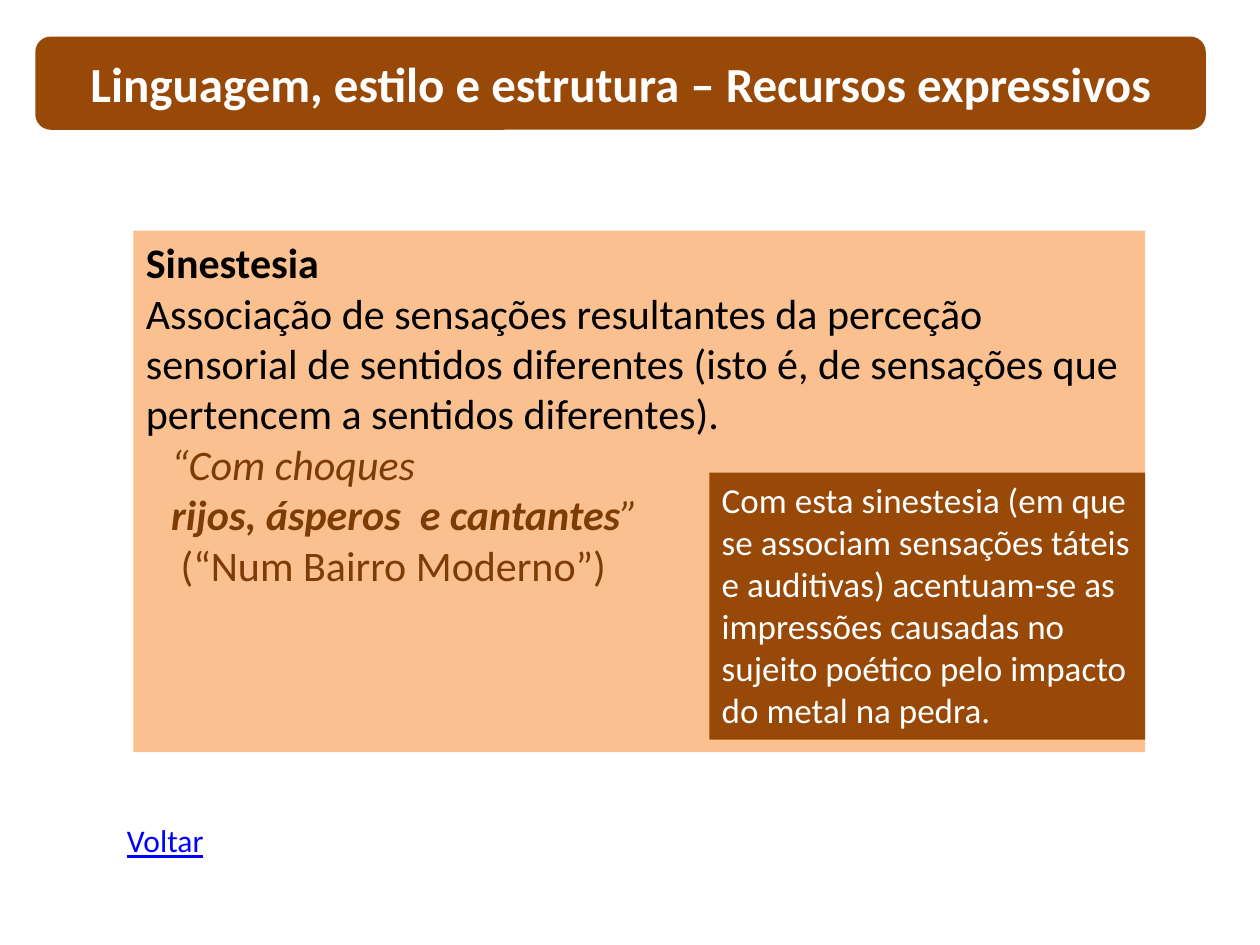
from pptx import Presentation
from pptx.dml.color import RGBColor
from pptx.enum.shapes import MSO_SHAPE
from pptx.enum.text import MSO_ANCHOR, PP_ALIGN
from pptx.util import Inches, Pt

RECT, ROUNDED = MSO_SHAPE.RECTANGLE, MSO_SHAPE.ROUNDED_RECTANGLE
TOP, MIDDLE = MSO_ANCHOR.TOP, MSO_ANCHOR.MIDDLE
LEFT, CENTER = PP_ALIGN.LEFT, PP_ALIGN.CENTER

COLORS = {
    "brown": "984807",
    "peach": "FAC090",
    "quote": "7D3B05",
    "black": "000000",
    "white": "FFFFFF",
    "link": "0000FF",
}
FONT = "Calibri"
QUOTE = {"color": "quote", "indent": 0.2}

TITLE = "Linguagem, estilo e estrutura – Recursos expressivos"
DEFINITION = [
    ([("Sinestesia", {"bold": True})], {}),
    ([("Associação de sensações resultantes da perceção sensorial de sentidos "
       "diferentes (isto é, de sensações que pertencem a sentidos diferentes).", {})], {}),
    ([("“Com choques", {"italic": True})], QUOTE),
    ([("rijos, ásperos  e cantantes", {"bold": True, "italic": True}),
      ("”", {"italic": True})], QUOTE),
    ([(" (“Num Bairro Moderno”)", {})], QUOTE),
]
COMMENT = ("Com esta sinestesia (em que se associam sensações táteis e auditivas) "
           "acentuam-se as impressões causadas no sujeito poético pelo impacto "
           "do metal na pedra.")
BACK = "Voltar"


def add_paragraph(p, runs, size=24, color="black", align=LEFT, indent=0):
    p.alignment = align
    if indent:
        p._p.get_or_add_pPr().set("marL", str(Inches(indent)))
    for text, style in runs:
        r = p.add_run()
        r.text = text
        r.font.name = FONT
        r.font.size = Pt(size)
        r.font.color.rgb = RGBColor.from_string(COLORS[color])
        r.font.bold = style.get("bold", False)
        r.font.italic = style.get("italic", False)
        r.font.underline = style.get("underline", False)


def add_text(sp, paragraphs, anchor=TOP, **fmt):
    tf = sp.text_frame
    tf.word_wrap = True
    tf.vertical_anchor = anchor
    for i, (runs, own) in enumerate(paragraphs):
        p = tf.paragraphs[0] if i == 0 else tf.add_paragraph()
        add_paragraph(p, runs, **{**fmt, **own})


def add_panel(s, kind, box, fill):
    sp = s.shapes.add_shape(kind, *map(Inches, box))
    sp.shadow.inherit = False
    sp.fill.solid()
    sp.fill.fore_color.rgb = RGBColor.from_string(COLORS[fill])
    sp.line.fill.background()
    return sp


prs = Presentation()
prs.slide_width, prs.slide_height = Inches(10), Inches(7.5)
s = prs.slides.add_slide(prs.slide_layouts[6])

title = add_panel(s, ROUNDED, (0.28, 0.29, 9.29, 0.74), "brown")
add_text(title, [([(TITLE, {"bold": True})], {})],
         anchor=MIDDLE, size=28, color="white", align=CENTER)

definition = add_panel(s, RECT, (1.06, 1.83, 8.03, 4.14), "peach")
add_text(definition, DEFINITION)

comment = add_panel(s, RECT, (5.63, 3.75, 3.46, 2.12), "brown")
add_text(comment, [([(COMMENT, {})], {})], size=20, color="white")

back = s.shapes.add_textbox(*map(Inches, (0.91, 6.47, 1.73, 0.4)))
add_text(back, [([(BACK, {"underline": True})], {})], size=18, color="link")

prs.save("out.pptx")
